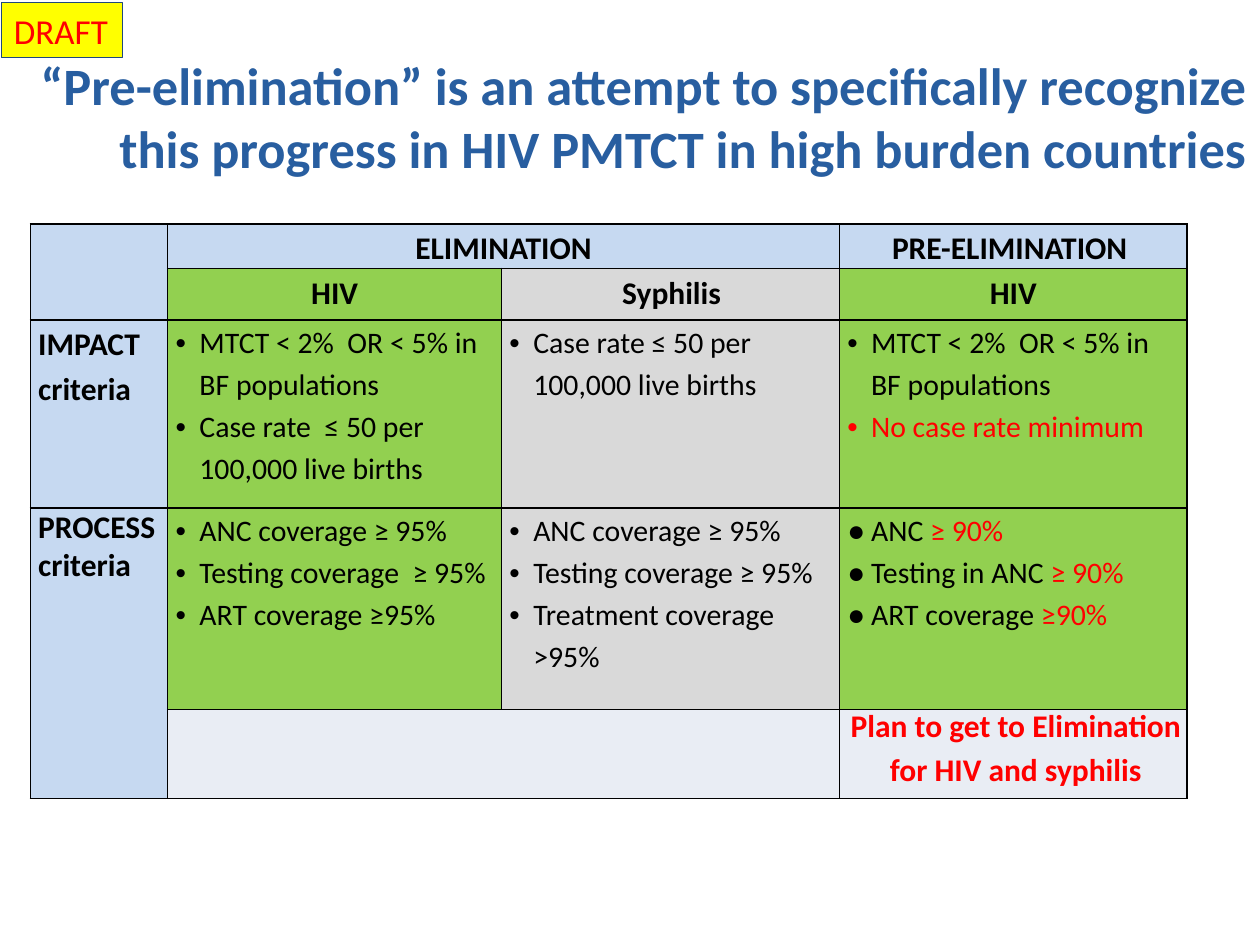
from dataclasses import dataclass

from lxml import etree
from pptx import Presentation
from pptx.dml.color import RGBColor
from pptx.enum.shapes import MSO_SHAPE
from pptx.enum.text import MSO_ANCHOR, MSO_AUTO_SIZE, PP_ALIGN
from pptx.oxml.ns import qn
from pptx.util import Cm, Pt

LEFT, CENTER, RIGHT = PP_ALIGN.LEFT, PP_ALIGN.CENTER, PP_ALIGN.RIGHT
TOP, MIDDLE = MSO_ANCHOR.TOP, MSO_ANCHOR.MIDDLE
NO_AUTOFIT = MSO_AUTO_SIZE.NONE
RECTANGLE = MSO_SHAPE.RECTANGLE

BLACK = RGBColor(0x00, 0x00, 0x00)
RED = RGBColor(0xFF, 0x00, 0x00)
YELLOW = RGBColor(0xFF, 0xFF, 0x00)
NAVY = RGBColor(0x1F, 0x49, 0x7D)
TITLE_BLUE = RGBColor(0x28, 0x5E, 0xA0)
PALE_BLUE = RGBColor(0xC6, 0xD9, 0xF1)
PALE_GRAY = RGBColor(0xE9, 0xED, 0xF4)
GREEN = RGBColor(0x92, 0xD0, 0x50)
GRAY = RGBColor(0xD9, 0xD9, 0xD9)

COLUMN_WIDTHS = (2.77, 6.73, 6.81, 7.01)
ROW_HEIGHTS = (0.89, 1.04, 3.79, 4.06, 1.8)
CELL_MARGINS = {"margin_left": Cm(0.16), "margin_right": Cm(0.16),
                "margin_top": 0, "margin_bottom": 0}


@dataclass
class Line:
    """One paragraph: black text, then an optional red part."""
    text: str
    red: str = ""
    bullet: str = ""
    size: float = 18
    bold: bool = True
    align: PP_ALIGN = LEFT
    spacing: float = 1.15
    indent: float = 0


@dataclass
class Entry:
    """A table cell, with the number of rows and columns it covers."""
    row: int
    column: int
    fill: RGBColor
    lines: tuple[Line, ...] = ()
    rows: int = 1
    columns: int = 1


def heading(text: str, indent: float = 0) -> tuple[Line, ...]:
    return (Line(text, align=CENTER, indent=indent),)


def item(text: str, red: str = "", bullet: str = "•") -> Line:
    return Line(text, red, bullet, size=17, bold=False)


ENTRIES = (
    # Headings
    Entry(0, 0, PALE_BLUE, rows=2),
    Entry(0, 1, PALE_BLUE, heading("ELIMINATION"), columns=2),
    Entry(0, 3, PALE_BLUE, heading("PRE-ELIMINATION ")),
    Entry(1, 1, GREEN, heading("HIV")),
    Entry(1, 2, GRAY, heading("Syphilis", indent=0.05)),
    Entry(1, 3, GREEN, heading("HIV")),
    # Impact criteria
    Entry(2, 0, PALE_BLUE, (Line("IMPACT"), Line("criteria"))),
    Entry(2, 1, GREEN, (item("MTCT < 2%  OR < 5% in BF populations"),
                        item("Case rate  ≤ 50 per 100,000 live births"))),
    Entry(2, 2, GRAY, (item("Case rate ≤ 50 per 100,000 live births"),)),
    Entry(2, 3, GREEN, (item("MTCT < 2%  OR < 5% in BF populations"),
                        item("", "No case rate minimum"))),
    # Process criteria
    Entry(3, 0, PALE_BLUE, (Line("PROCESS criteria", spacing=1),), rows=2),
    Entry(3, 1, GREEN, (item("ANC coverage ≥ 95%"),
                        item("Testing coverage  ≥ 95%"),
                        item("ART coverage ≥95%"))),
    Entry(3, 2, GRAY, (item("ANC coverage ≥ 95%"),
                       item("Testing coverage ≥ 95%"),
                       item("Treatment coverage >95%"))),
    Entry(3, 3, GREEN, (item("ANC ", "≥ 90%", "●"),
                        item("Testing in ANC ", "≥ 90%", "●"),
                        item("ART coverage ", "≥90%", "●"))),
    Entry(4, 1, PALE_GRAY, columns=2),
    Entry(4, 3, PALE_GRAY),
)


def apply(target, values: dict) -> None:
    for name, value in values.items():
        setattr(target, name, value)


def add_run(paragraph, text: str, size: float, color: RGBColor, bold: bool) -> None:
    run = paragraph.add_run()
    run.text = text
    apply(run.font, {"name": "Calibri", "size": Pt(size), "bold": bold})
    run.font.color.rgb = color


def write_lines(text_frame, lines: tuple[Line, ...]) -> None:
    for index, line in enumerate(lines):
        paragraph = text_frame.add_paragraph() if index else text_frame.paragraphs[0]
        apply(paragraph, {"alignment": line.align, "line_spacing": line.spacing})
        properties = paragraph._p.get_or_add_pPr()
        if line.indent:
            properties.set("marL", str(Cm(line.indent)))
        if line.bullet:
            properties.set("marL", str(Cm(0.48)))
            properties.set("indent", str(-Cm(0.48)))
            font = etree.SubElement(properties, qn("a:buFont"))
            font.set("typeface", "Arial")
            etree.SubElement(properties, qn("a:buChar")).set("char", line.bullet)
        for text, color in ((line.text, BLACK), (line.red, RED)):
            if text:
                add_run(paragraph, text, line.size, color, line.bold)


def set_borders(cell) -> None:
    properties = cell._tc.get_or_add_tcPr()
    for index, side in enumerate(("a:lnL", "a:lnR", "a:lnT", "a:lnB")):
        border = etree.Element(qn(side), w=str(Pt(1)))
        fill = etree.SubElement(border, qn("a:solidFill"))
        etree.SubElement(fill, qn("a:srgbClr")).set("val", str(BLACK))
        properties.insert(index, border)


def add_criteria_table(slide) -> None:
    frame = slide.shapes.add_table(
        len(ROW_HEIGHTS), len(COLUMN_WIDTHS), Cm(0.61), Cm(4.52),
        Cm(sum(COLUMN_WIDTHS)), Cm(sum(ROW_HEIGHTS)))
    table = frame.table
    apply(table, {"first_row": False, "horz_banding": False})
    for column, width in zip(table.columns, COLUMN_WIDTHS):
        column.width = Cm(width)
    for row, height in zip(table.rows, ROW_HEIGHTS):
        row.height = Cm(height)
    for cell in table.iter_cells():
        apply(cell, CELL_MARGINS)
        set_borders(cell)
    for entry in ENTRIES:
        cell = table.cell(entry.row, entry.column)
        last = table.cell(entry.row + entry.rows - 1, entry.column + entry.columns - 1)
        if last is not cell and entry.rows * entry.columns > 1:
            cell.merge(last)
        cell.fill.solid()
        cell.fill.fore_color.rgb = entry.fill
        write_lines(cell.text_frame, entry.lines)


def add_plan_note(slide) -> None:
    note = slide.shapes.add_textbox(Cm(16.56), Cm(14), Cm(7.59), Cm(2.03))
    note.text_frame.word_wrap = True
    write_lines(note.text_frame, (
        Line("", "Plan to get to Elimination for HIV and syphilis",
             align=CENTER, indent=0.25),))


def add_draft_tag(slide) -> None:
    tag = slide.shapes.add_shape(RECTANGLE, Cm(0.03), Cm(0.05), Cm(2.44), Cm(1.11))
    tag.shadow.inherit = False
    tag.fill.solid()
    tag.fill.fore_color.rgb = YELLOW
    tag.line.color.rgb = NAVY
    tag.line.width = Pt(0.75)
    apply(tag.text_frame, {"word_wrap": False, "vertical_anchor": MIDDLE})
    write_lines(tag.text_frame, (
        Line("", "DRAFT", size=20, bold=False, spacing=1),))


def format_title(slide) -> None:
    title = slide.shapes.title
    apply(title, {"left": 0, "top": Cm(0.94), "width": Cm(25.4), "height": Cm(3.43)})
    apply(title.text_frame, {"word_wrap": True, "auto_size": NO_AUTOFIT,
                             "vertical_anchor": TOP})
    paragraph = title.text_frame.paragraphs[0]
    paragraph.alignment = RIGHT
    add_run(paragraph, "“Pre-elimination” is an attempt to specifically recognize "
            "this progress in HIV PMTCT in high burden countries", 30, TITLE_BLUE, True)


def main() -> None:
    presentation = Presentation()
    apply(presentation, {"slide_width": Cm(25.4), "slide_height": Cm(19.05)})
    slide = presentation.slides.add_slide(presentation.slide_layouts[5])
    format_title(slide)
    add_criteria_table(slide)
    add_plan_note(slide)
    add_draft_tag(slide)
    presentation.save("out.pptx")


if __name__ == "__main__":
    main()
